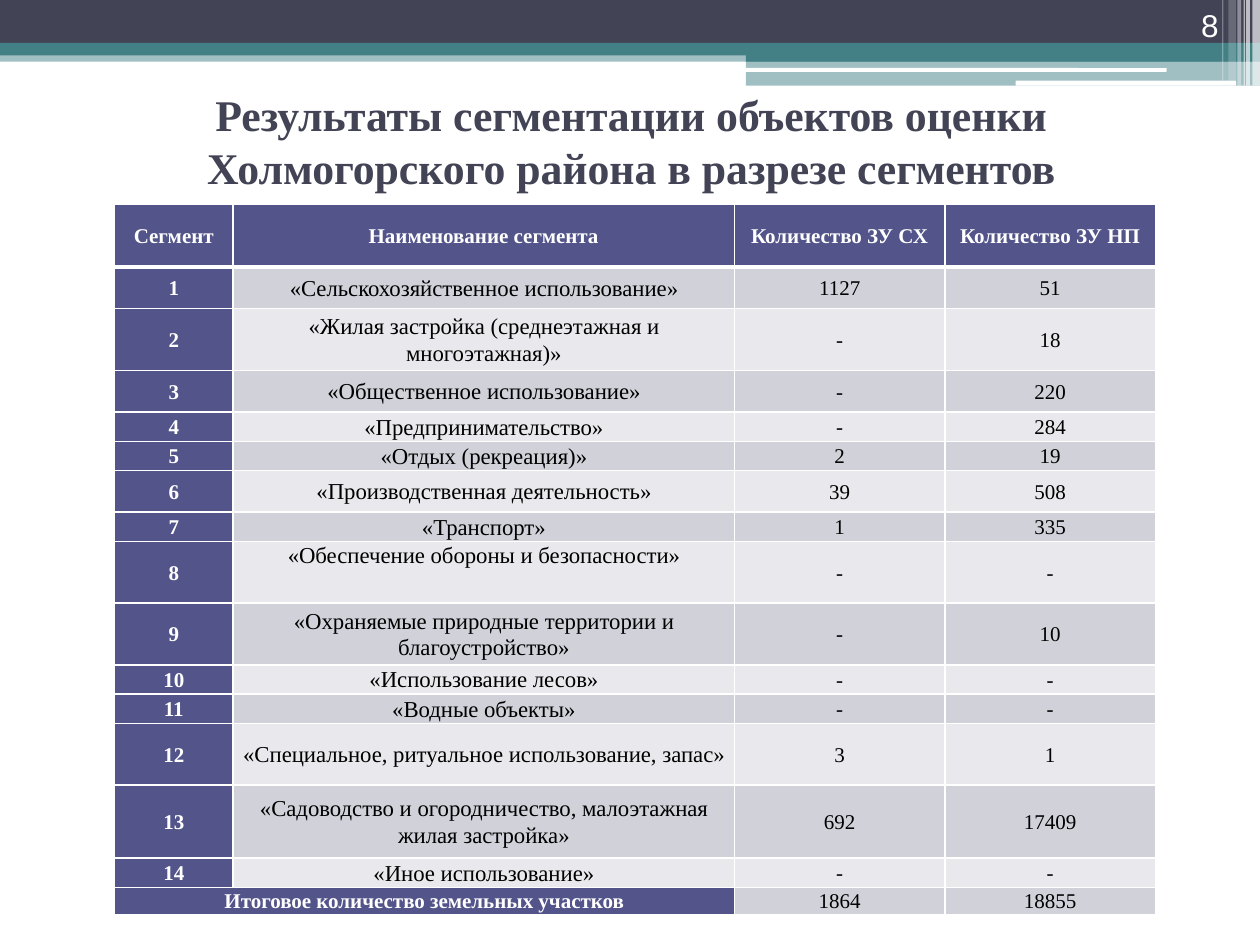
from dataclasses import dataclass

from pptx import Presentation
from pptx import util as u
from pptx.dml import color
from pptx.enum import shapes, text
from pptx.oxml import parse_xml
from pptx.oxml import ns

In = u.Inches


@dataclass(frozen=True)
class Theme:
    """Colours, fonts and type sizes of the deck."""
    dark: str = "424456"
    teal: str = "438086"
    white: str = "FFFFFF"
    black: str = "000000"
    head: str = "53548A"
    bands: tuple = ("E9E9ED", "D1D1DA")
    serif: str = "Times New Roman"
    sans: str = "Arial"
    title: float = 25
    page: float = 18
    name: float = 13
    cell: float = 12


T = Theme()

ROWS = [
    ("Сегмент", "Наименование сегмента", "Количество ЗУ СХ", "Количество ЗУ НП"),
    ("1", "«Сельскохозяйственное использование»", "1127", "51"),
    ("2", "«Жилая застройка (среднеэтажная и многоэтажная)»", "-", "18"),
    ("3", "«Общественное использование»", "-", "220"),
    ("4", "«Предпринимательство»", "-", "284"),
    ("5", "«Отдых (рекреация)»", "2", "19"),
    ("6", "«Производственная деятельность»", "39", "508"),
    ("7", "«Транспорт»", "1", "335"),
    ("8", "«Обеспечение обороны и безопасности»", "-", "-"),
    ("9", "«Охраняемые природные территории и благоустройство»", "-", "10"),
    ("10", "«Использование лесов»", "-", "-"),
    ("11", "«Водные объекты»", "-", "-"),
    ("12", "«Специальное, ритуальное использование, запас»", "3", "1"),
    ("13", "«Садоводство и огородничество, малоэтажная жилая застройка»", "692", "17409"),
    ("14", "«Иное использование»", "-", "-"),
    ("Итоговое количество земельных участков", "", "1864", "18855"),
]
WIDTHS = (0.94, 3.98, 1.67, 1.67)
LOW, MID, TALL = 0.21, 0.33, 0.49
HEIGHTS = (0.5, MID, TALL, MID, LOW, LOW, MID, LOW, TALL, TALL, LOW, LOW, TALL, 0.58, LOW, LOW)
TOP_ROW = 8


def put(obj, vals):
    """Set each attribute in vals on obj."""
    for key, val in vals.items():
        setattr(obj, key, val)


def style(frame, words, size, font, tint, bold=False, align="CENTER", space=None):
    """Write words into a text frame in one format."""
    frame.text = words
    for para in frame.paragraphs:
        put(para, {"alignment": getattr(text.PP_ALIGN, align), "line_spacing": space})
        for run in para.runs:
            put(run.font, {"size": u.Pt(size), "name": font, "bold": bold})
            run.font.color.rgb = color.RGBColor.from_string(tint)


def bar(slide, box, tint, alpha=100, kind="RECTANGLE"):
    """Draw one plain bar, seen through when alpha is below 100."""
    shape = slide.shapes.add_shape(getattr(shapes.MSO_SHAPE, kind), *map(In, box))
    shape.shadow.inherit = False
    shape.line.fill.background()
    shape.fill.solid()
    shape.fill.fore_color.rgb = color.RGBColor.from_string(tint)
    if alpha < 100:
        mark = shape.fill._xPr.find(".//" + ns.qn("a:srgbClr"))
        mark.append(parse_xml(f'<a:alpha {ns.nsdecls("a")} val="{alpha * 1000}"/>'))


def banner(slide, left, top, wide):
    """Draw the header bands, white slips and right-hand stripes."""
    half, end = left + 5.92, left + wide
    bar(slide, (left, top + 0.4, wide, 0.09), T.teal, 50)
    bar(slide, (left, top, wide, 0.34), T.dark)
    bar(slide, (left, top + 0.34, wide, 0.1), T.teal)
    bar(slide, (half, top + 0.39, end - half, 0.1), T.teal)
    bar(slide, (half, top + 0.48, end - half, 0.2), T.teal, 50)
    for x, y, w, h in ((5.91, 0.54, 3.35, 0.03), (8.06, 0.64, 1.75, 0.04)):
        bar(slide, (left + x, top + y, w, h), T.white, kind="ROUNDED_RECTANGLE")
    stripes = ((0.06, 0.06, 0.68, 65), (0.11, 0.03, 0.68, 65), (0.13, 0.01, 0.68, 60),
               (0.18, 0.03, 0.68, 40), (0.25, 0.06, 0.64, 20), (0.3, 0.01, 0.64, 30))
    for gap, w, h, alpha in stripes:
        bar(slide, (end - gap, top, w, h), T.white, alpha)


def label(slide, box, words, anchor, *look, **more):
    """Place a wrapped text box."""
    frame = slide.shapes.add_textbox(*map(In, box)).text_frame
    put(frame, {"word_wrap": True, "vertical_anchor": getattr(text.MSO_ANCHOR, anchor)})
    style(frame, words, *look, **more)


def edge(cell, sides):
    """Give a cell white borders, with widths in points by side."""
    props = cell._tc.get_or_add_tcPr()
    for spot, (side, width) in enumerate(sides.items()):
        props.insert(spot, parse_xml(
            f'<a:ln{side} {ns.nsdecls("a")} w="{u.Pt(width)}"><a:solidFill>'
            f'<a:srgbClr val="{T.white}"/></a:solidFill></a:ln{side}>'))


def grid(slide, left, top):
    """Build the table of segments and plot counts."""
    table = slide.shapes.add_table(len(ROWS), len(WIDTHS), In(left), In(top),
                                   In(sum(WIDTHS)), In(sum(HEIGHTS))).table
    for col, wide in zip(table.columns, WIDTHS):
        col.width = In(wide)
    for row, high in zip(table.rows, HEIGHTS):
        row.height = In(high)
    last = len(ROWS) - 1
    for r, row in enumerate(ROWS):
        for c, words in enumerate(row):
            cell = table.cell(r, c)
            first = r == 0 or c == 0 or (r == last and c == 1)
            side = In(0.07 if r == 0 else 0.05)
            high = r == TOP_ROW and c == 1
            put(cell, {"margin_left": side, "margin_right": side, "margin_top": 0,
                       "margin_bottom": 0,
                       "vertical_anchor": text.MSO_ANCHOR.TOP if high else text.MSO_ANCHOR.MIDDLE})
            cell.fill.solid()
            cell.fill.fore_color.rgb = color.RGBColor.from_string(T.head if first else T.bands[r % 2])
            size = T.name if c == 1 and not first else T.cell
            style(cell.text_frame, words, size, T.serif, T.white if first else T.black,
                  first, space=1.07)
            edge(cell, {"L": 1, "R": 1, "T": 3 if r == 1 else 1, "B": 3 if r == 0 else 1})
    table.cell(last, 0).merge(table.cell(last, 1))


def main():
    """Build and save the slide."""
    deck = Presentation()
    put(deck, {"slide_width": In(10), "slide_height": In(7.5)})
    slide = deck.slides.add_slide(deck.slide_layouts[6])
    banner(slide, 0, 0, 10)
    label(slide, (0.51, 0.76, 9, 0.71),
          "Результаты сегментации объектов оценки\vХолмогорского района в разрезе сегментов",
          "MIDDLE", T.title, T.serif, T.dark, True)
    label(slide, (8.94, 0, 0.83, 0.4), "8", "BOTTOM", T.page, T.sans, T.white, align="RIGHT")
    grid(slide, 0.91, 1.62)
    deck.save("out.pptx")


if __name__ == "__main__":
    main()
